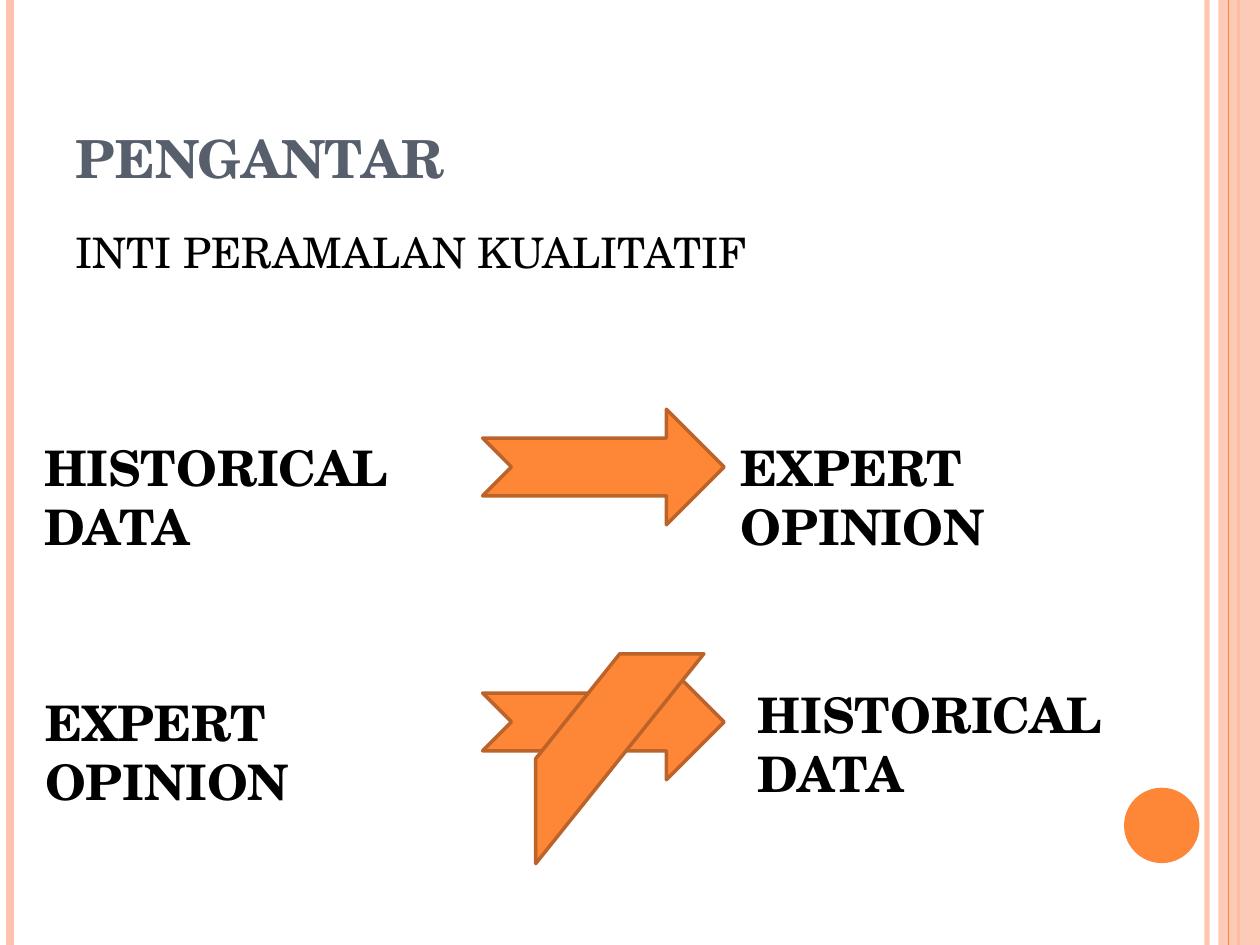
import pptx
import pptx.dml.color
import pptx.enum.shapes
import pptx.enum.text
import pptx.oxml.ns
import pptx.util
from lxml import etree

Cm = pptx.util.Cm
Pt = pptx.util.Pt
SHAPE = pptx.enum.shapes.MSO_SHAPE
ANCHOR = pptx.enum.text.MSO_ANCHOR

COLORS = {
    "orange": "FE8637",
    "peach": "FEC3AE",
    "outline": "BC6329",
    "title": "575F6D",
    "text": "000000",
}
FONT = "TeX Gyre Schola"
PAGE_WIDTH = 25.4
PAGE_HEIGHT = 19.05
LABEL_SIZE = (9.1, 1.45)
ARROW_SIZE = (4.87, 2.33)
ARROW_LEFT = 9.73


def color(name):
    return pptx.dml.color.RGBColor.from_string(COLORS[name])


def set_opacity(element, percent):
    fill = element.find(".//" + pptx.oxml.ns.qn("a:srgbClr"))
    alpha = etree.SubElement(fill, pptx.oxml.ns.qn("a:alpha"))
    alpha.set("val", str(percent * 1000))


def add_rule(page, x, color_name, width, opacity=100):
    rule = page.shapes.add_connector(
        pptx.enum.shapes.MSO_CONNECTOR.STRAIGHT, Cm(x), 0, Cm(x), Cm(PAGE_HEIGHT)
    )
    rule.line.color.rgb = color(color_name)
    rule.line.width = Pt(width)
    properties = rule._element.spPr
    etree.SubElement(properties, pptx.oxml.ns.qn("a:effectLst"))
    if opacity < 100:
        set_opacity(properties, opacity)


def add_figure(page, kind, position, size, fill="orange", outline=None, opacity=100):
    figure = page.shapes.add_shape(kind, *map(Cm, position + size))
    figure.shadow.inherit = False
    figure.fill.solid()
    figure.fill.fore_color.rgb = color(fill)
    if opacity < 100:
        set_opacity(figure._element.spPr, opacity)
    if outline:
        figure.line.color.rgb = color(outline)
        figure.line.width = Pt(2)
    else:
        figure.line.fill.background()


def add_text(page, text, position, size, points, bold=True,
             color_name="text", anchor=ANCHOR.TOP, space_before=0):
    box = page.shapes.add_textbox(*map(Cm, position + size))
    frame = box.text_frame
    frame.word_wrap = True
    frame.vertical_anchor = anchor
    para = frame.paragraphs[0]
    para.space_before = Pt(space_before)
    span = para.add_run()
    span.text = text
    span.font.color.rgb = color(color_name)
    font_format = {"name": FONT, "size": Pt(points), "bold": bold}
    for attribute, value in font_format.items():
        setattr(span.font, attribute, value)


def add_frame(page):
    add_rule(page, 24.33, "peach", 3, 93)
    add_rule(page, 0.2, "peach", 4.5)
    add_rule(page, 24.97, "orange", 1.5)
    band_left = 24.56
    add_figure(page, SHAPE.RECTANGLE, (band_left, 0),
               (PAGE_WIDTH - band_left, PAGE_HEIGHT), "peach", opacity=87)
    add_rule(page, 24.76, "orange", 0.75)
    add_figure(page, SHAPE.OVAL, (22.66, 15.88), (1.52, 1.52))


def add_relation(page, source, source_at, target, target_at, arrow_top):
    add_text(page, source, source_at, LABEL_SIZE, 28)
    add_text(page, target, target_at, LABEL_SIZE, 28)
    add_figure(page, SHAPE.NOTCHED_RIGHT_ARROW, (ARROW_LEFT, arrow_top),
               ARROW_SIZE, outline="outline")


def main():
    deck = pptx.Presentation()
    deck.slide_width = Cm(PAGE_WIDTH)
    deck.slide_height = Cm(PAGE_HEIGHT)
    page = deck.slides.add_slide(deck.slide_layouts[6])

    add_frame(page)
    add_text(page, "PENGANTAR", (1.27, 0.76), (20.75, 3.18), 30,
             color_name="title", anchor=ANCHOR.BOTTOM)
    add_text(page, "INTI PERAMALAN KUALITATIF", (1.27, 4.45), (22.86, 1.9), 24,
             bold=False, space_before=6)

    history, opinion = "HISTORICAL DATA", "EXPERT OPINION"
    add_relation(page, history, (0.64, 8.69), opinion, (14.68, 8.69), 8.25)
    add_relation(page, opinion, (0.66, 13.84), history, (15.03, 13.67), 13.39)
    add_figure(page, SHAPE.DIAGONAL_STRIPE, (10.8, 13.18), (3.39, 4.23),
               outline="outline")

    deck.save("out.pptx")


if __name__ == "__main__":
    main()
